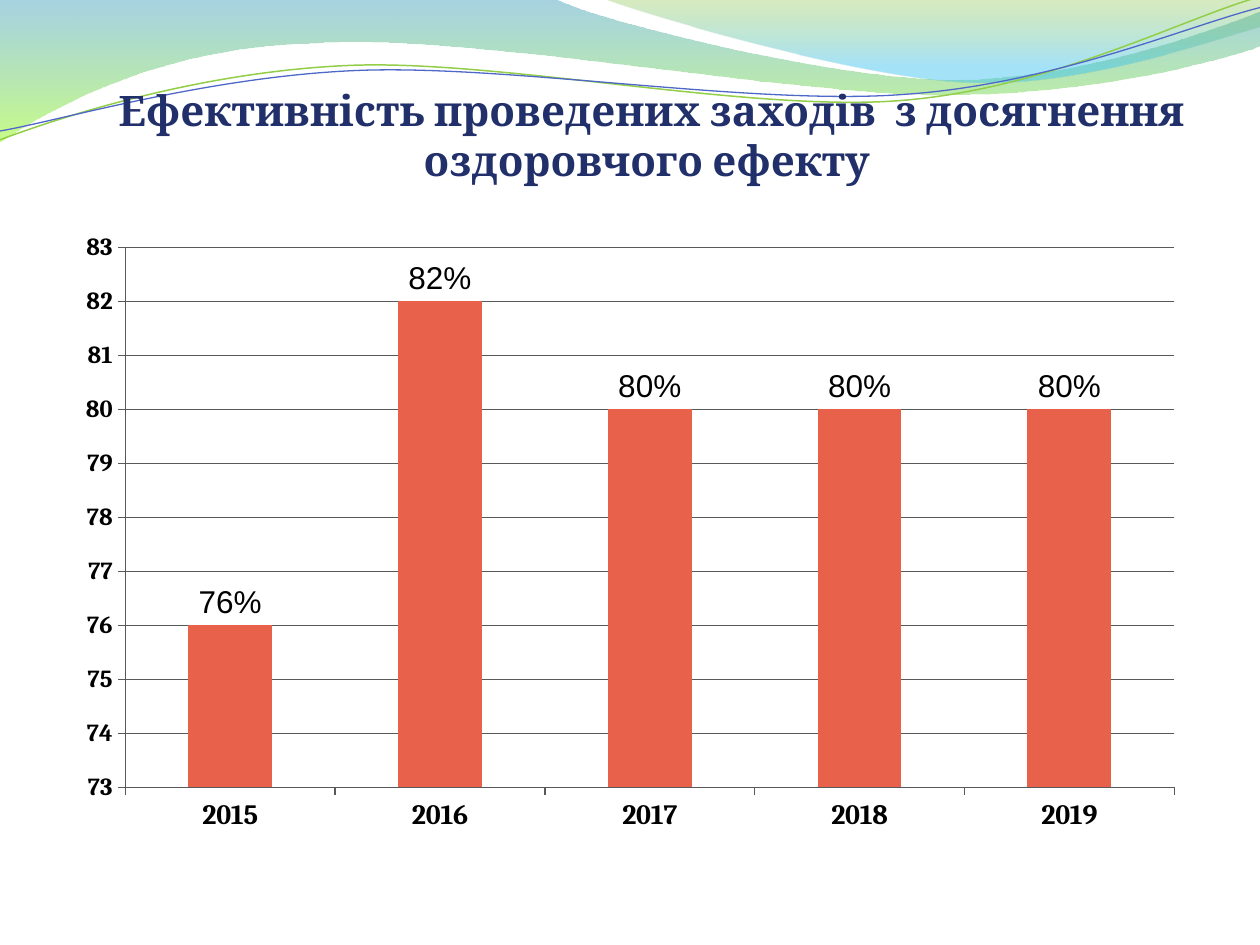
from lxml.etree import SubElement
from pptx import Presentation
from pptx.chart.data import CategoryChartData
from pptx.dml.color import RGBColor
from pptx.enum.chart import XL_CHART_TYPE, XL_LABEL_POSITION, XL_TICK_MARK
from pptx.enum.text import MSO_ANCHOR, PP_ALIGN
from pptx.oxml import parse_xml
from pptx.oxml.ns import nsdecls, qn
from pptx.util import Inches, Pt

# Content
TITLE = "Ефективність проведених заходів  з досягнення оздоровчого ефекту "
YEARS = ["2015", "2016", "2017", "2018", "2019"]
EFFECT = [76, 82, 80, 80, 80]

NAVY = RGBColor(0x21, 0x30, 0x6A)
CORAL = RGBColor(0xE7, 0x61, 0x4B)
BLACK = RGBColor(0, 0, 0)
GRAY = RGBColor(0x59, 0x59, 0x59)
GREEN = RGBColor(0x93, 0xCE, 0x48)
BLUE = RGBColor(0x4E, 0x67, 0xC8)

# Waves: two numbers make a straight step; six make a Bezier curve.
# Gradient stops: position %, colour, opacity %
FILLED_WAVES = [
    ((0, 0), [(4.4, -0.01), (4.76, 0.17, 6.64, 0.63, 7.58, 0.63),
              (8.53, 0.63, 9.58, 0.26, 10, 0.09), (10.01, 0.36),
              (9.83, 0.44, 8.7, 0.76, 7.46, 0.75),
              (6.22, 0.75, 3.82, 0.28, 2.57, 0.34),
              (1.29, 0.36, 0.46, 0.83, -0.01, 1.13), (0, 0)],
     [(0, "3B9CBF", 45), (100, "9CFA24", 55)]),
    ((4.79, -0.01), [(5.09, 0.11, 6.82, 0.62, 7.69, 0.65),
                     (8.56, 0.69, 9.61, 0.32, 10, 0.21), (10, 0), (4.79, -0.01)],
     [(0, "7EBE2C", 30), (80, "39C1F1", 45)]),
]
LINE_WAVES = [
    ((0, 1.11), [(0.48, 0.93, 1.58, 0.57, 2.77, 0.52),
                 (3.95, 0.47, 5.93, 0.89, 7.13, 0.8),
                 (8.33, 0.71, 9.38, 0.15, 9.98, -0.02)], GREEN, 0.85),
    ((0, 1.04), [(0.47, 0.96, 1.64, 0.61, 2.83, 0.56),
                 (4.03, 0.51, 5.97, 0.84, 7.17, 0.75),
                 (8.36, 0.67, 9.41, 0.21, 10, 0.06)], BLUE, 0.75),
]


def add_wave(slide, start, segments, closed):
    """Build an outline through the end points, then bend its curved steps."""
    builder = slide.shapes.build_freeform(*map(Inches, start))
    builder.add_line_segments([tuple(map(Inches, segment[-2:])) for segment in segments],
                              close=closed)
    shape = builder.convert_to_shape()
    shape.shadow.inherit = False
    steps = list(shape.element.iter(qn("a:lnTo")))
    for step, segment in zip(steps, segments):
        if len(segment) == 2:
            continue
        curve = parse_xml(f'<a:cubicBezTo {nsdecls("a")}/>')
        for x, y in zip(segment[::2], segment[1::2]):
            point = SubElement(curve, qn("a:pt"))
            point.set("x", str(Inches(x) - shape.left))
            point.set("y", str(Inches(y) - shape.top))
        step.getparent().replace(step, curve)
    return shape


def fill_gradient(shape, stops):
    """Fill from top to bottom with translucent colours."""
    stop_xml = "".join(
        f'<a:gs pos="{position * 1000}"><a:srgbClr val="{color}">'
        f'<a:alpha val="{opacity * 1000}"/></a:srgbClr></a:gs>'
        for position, color, opacity in stops)
    gradient = parse_xml(f'<a:gradFill {nsdecls("a")}><a:gsLst>{stop_xml}</a:gsLst>'
                         '<a:lin ang="5400000" scaled="0"/></a:gradFill>')
    shape.element.spPr.find(qn("a:custGeom")).addnext(gradient)


def style_font(font, name, size, bold, color):
    font.name, font.size, font.bold = name, Pt(size), bold
    font.color.rgb = color


def style_axis(axis, size):
    axis.major_tick_mark = XL_TICK_MARK.OUTSIDE
    axis.minor_tick_mark = XL_TICK_MARK.NONE
    axis.format.line.color.rgb = GRAY
    style_font(axis.tick_labels.font, "Cambria", size, True, BLACK)


def place_plot(chart, **fractions):
    """Fix the inner plot area as fractions of the chart."""
    plot_area = chart.element.find(".//" + qn("c:plotArea"))
    for old in plot_area.findall(qn("c:layout")):
        plot_area.remove(old)
    layout = parse_xml(f'<c:layout {nsdecls("c")}/>')
    plot_area.insert(0, layout)
    manual = SubElement(layout, qn("c:manualLayout"))
    settings = {"layoutTarget": "inner", "xMode": "edge", "yMode": "edge", **fractions}
    for name, value in settings.items():
        SubElement(manual, qn("c:" + name)).set("val", str(value))


def add_effect_chart(slide):
    data = CategoryChartData(number_format="General")
    data.categories = YEARS
    data.add_series("Series 1", EFFECT)
    chart = slide.shapes.add_chart(XL_CHART_TYPE.COLUMN_CLUSTERED, Inches(0.5),
                                   Inches(1.75), Inches(9), Inches(4.95), data).chart
    chart.has_legend = chart.has_title = False
    style_font(chart.font, "Cambria", 18, False, BLACK)
    style_axis(chart.category_axis, 16)
    axis = chart.value_axis
    style_axis(axis, 14)
    axis.minimum_scale, axis.maximum_scale, axis.major_unit = 73, 83, 1
    axis.major_gridlines.format.line.color.rgb = GRAY

    plot = chart.plots[0]
    plot.gap_width = 150
    plot.vary_by_categories = False
    series = plot.series[0]
    series.format.fill.solid()
    series.format.fill.fore_color.rgb = CORAL
    labels = series.data_labels
    labels.show_value = True
    labels.position = XL_LABEL_POSITION.OUTSIDE_END
    style_font(labels.font, "Arial", 18, True, BLACK)
    for index, value in enumerate(EFFECT):
        label = series.points[index].data_label
        run = label.text_frame.paragraphs[0].add_run()
        run.text = f"{value}%"
        style_font(run.font, "Arial", 18, False, BLACK)
        label.position = XL_LABEL_POSITION.OUTSIDE_END
    place_plot(chart, x=0.055, y=0.043, w=0.925, h=0.866)


def add_title(slide):
    title = slide.shapes.title
    title.left, title.top, title.width, title.height = map(Inches, (0.67, 0.6, 9, 0.87))
    frame = title.text_frame
    frame.word_wrap = True
    frame.vertical_anchor = MSO_ANCHOR.BOTTOM
    frame.margin_left = frame.margin_right = frame.margin_bottom = 0
    frame.margin_top = Inches(0.05)
    paragraph = frame.paragraphs[0]
    paragraph.alignment = PP_ALIGN.CENTER
    run = paragraph.add_run()
    run.text = TITLE
    style_font(run.font, "Cambria", 24, True, NAVY)


def main():
    presentation = Presentation()
    presentation.slide_width, presentation.slide_height = Inches(10), Inches(7.5)
    slide = presentation.slides.add_slide(presentation.slide_layouts[5])

    # Decorative waves
    for start, segments, stops in FILLED_WAVES:
        shape = add_wave(slide, start, segments, True)
        fill_gradient(shape, stops)
        shape.line.fill.background()
    for start, segments, color, width in LINE_WAVES:
        shape = add_wave(slide, start, segments, False)
        shape.fill.background()
        shape.line.color.rgb = color
        shape.line.width = Pt(width)

    # Title in front of the waves, then the chart
    slide.shapes.element.append(slide.shapes.title.element)
    add_title(slide)
    add_effect_chart(slide)
    presentation.save("out.pptx")


if __name__ == "__main__":
    main()
